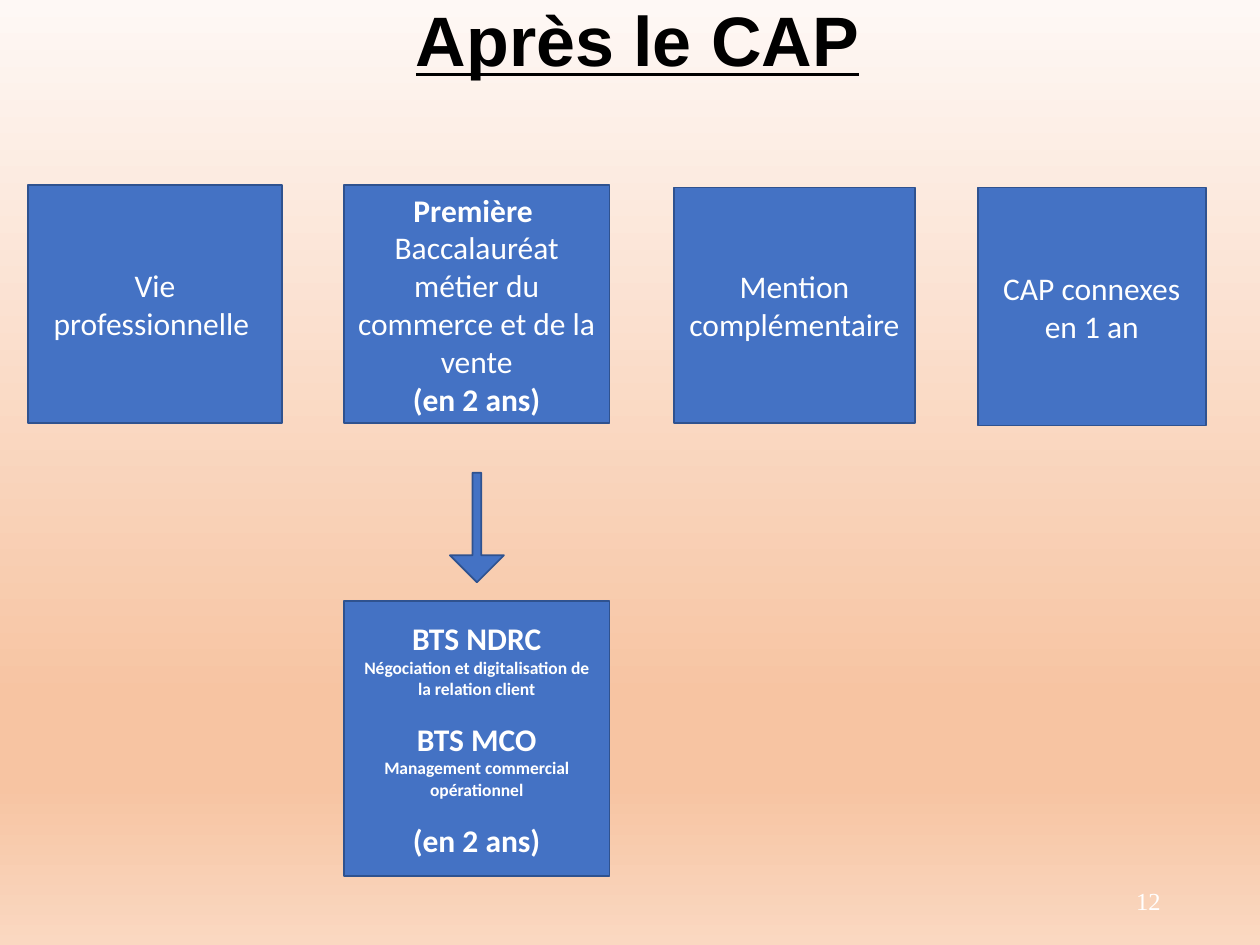
import copy

import pptx
import pptx.dml.color
import pptx.enum.shapes
import pptx.enum.text
import pptx.oxml.ns
import pptx.util

Cm, Pt = pptx.util.Cm, pptx.util.Pt
Shape = pptx.enum.shapes.MSO_SHAPE
Align = pptx.enum.text.PP_ALIGN
Anchor = pptx.enum.text.MSO_ANCHOR

COLORS = {"fill": "4472C4", "line": "2F528F", "light": "FFFFFF", "dark": "000000"}
STOPS = [(0, "FEF8F5"), (0.74, "F7C4A2"), (0.83, "F7C4A2"), (1, "FAD8C1")]
BOXES = [
    (0.56, 3.73, 5.13, 4.8, [("Vie professionnelle ", 18, False, 0)]),
    (6.93, 3.73, 5.36, 4.8, [
        ("Première ", 18, True, 0),
        ("Baccalauréat métier du commerce et de la vente", 18, False, 0),
        ("(en 2 ans)", 18, True, 0),
    ]),
    (13.59, 3.78, 4.85, 4.75, [("Mention complémentaire ", 18, False, 0)]),
    (19.71, 3.78, 4.6, 4.8, [
        ("CAP connexes", 18, False, 0),
        ("en 1 an", 18, False, 0),
    ]),
    (6.93, 12.12, 5.36, 5.54, [
        ("BTS NDRC", 18, True, 0),
        ("Négociation et digitalisation de la relation client", 10, True, 0),
        ("BTS MCO", 18, True, 12),
        ("Management commercial opérationnel", 10, True, 0),
        ("(en 2 ans)", 18, True, 12),
    ]),
]


def rgb(code):
    """Turn a hex string into a colour."""
    return pptx.dml.color.RGBColor.from_string(code)


def style(para, name, size, color, bold=False, align=Align.CENTER):
    """Set the font and alignment of a paragraph."""
    para.alignment = align
    font = para.font
    font.name, font.size, font.bold = name, Pt(size), bold
    font.color.rgb = rgb(COLORS[color])


def paint(slide):
    """Fill the background with a gradient from top to bottom."""
    fill = slide.background.fill
    fill.gradient()
    fill.gradient_angle = 270
    group = next(slide.element.iter(pptx.oxml.ns.qn("a:gsLst")))
    while len(group) < len(STOPS):
        group.append(copy.deepcopy(group[0]))
    for stop, (place, code) in zip(fill.gradient_stops, STOPS):
        stop.position = place
        stop.color.rgb = rgb(code)


def add_title(slide, text):
    """Move the title placeholder and format its text."""
    title = slide.shapes.title
    title.left, title.top = Cm(0.15), Cm(0.13)
    title.width, title.height = Cm(25.4), Cm(1.65)
    frame = title.text_frame
    frame.text = text
    frame.auto_size = pptx.enum.text.MSO_AUTO_SIZE.NONE
    frame.vertical_anchor = Anchor.BOTTOM
    para = frame.paragraphs[0]
    style(para, "Arial", 40, "dark", True)
    para.font.underline = True
    para.line_spacing = 0.9


def add_block(slide, kind, left, top, width, height):
    """Add a blue shape with a thin outline."""
    block = slide.shapes.add_shape(kind, Cm(left), Cm(top), Cm(width), Cm(height))
    block.shadow.inherit = False
    block.fill.solid()
    block.fill.fore_color.rgb = rgb(COLORS["fill"])
    block.line.color.rgb = rgb(COLORS["line"])
    block.line.width = Pt(1)
    return block


def add_box(slide, left, top, width, height, lines):
    """Add a rectangle with its lines of text."""
    box = add_block(slide, Shape.RECTANGLE, left, top, width, height)
    frame = box.text_frame
    frame.word_wrap = True
    frame.vertical_anchor = Anchor.MIDDLE
    frame.text = "\n".join(line[0] for line in lines)
    for para, (_, size, bold, gap) in zip(frame.paragraphs, lines):
        style(para, "Calibri", size, "light", bold)
        para.space_before = Pt(gap)


def add_arrow(slide):
    """Add the arrow leading down to the next diploma."""
    arrow = add_block(slide, Shape.DOWN_ARROW, 9.07, 9.53, 1.09, 2.21)
    arrow.adjustments[0] = 0.16
    arrow.adjustments[1] = 0.5


def add_number(slide, text):
    """Add the page number at the bottom right."""
    box = slide.shapes.add_textbox(Cm(17.93), Cm(17.65), Cm(5.72), Cm(1.02))
    frame = box.text_frame
    frame.word_wrap = True
    frame.vertical_anchor = Anchor.MIDDLE
    frame.text = text
    style(frame.paragraphs[0], "Times New Roman", 14, "light", align=Align.RIGHT)


def main():
    """Build the slide and save it."""
    deck = pptx.Presentation()
    deck.slide_width, deck.slide_height = Cm(25.4), Cm(19.05)
    slide = deck.slides.add_slide(deck.slide_layouts[5])
    paint(slide)
    add_title(slide, "Après le CAP")
    add_number(slide, "12")
    for box in BOXES:
        add_box(slide, *box)
    add_arrow(slide)
    deck.save("out.pptx")


if __name__ == "__main__":
    main()
